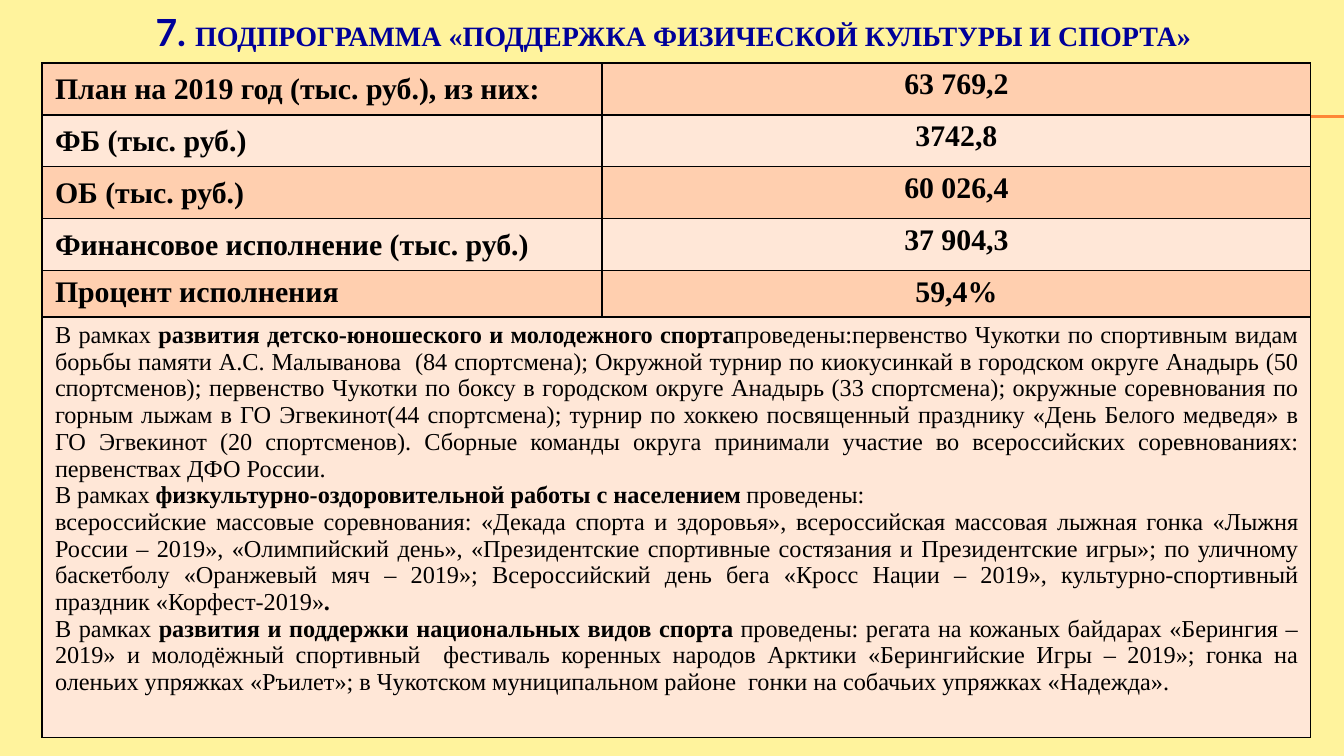
from lxml import etree
from pptx import Presentation
from pptx.dml.color import RGBColor
from pptx.enum.shapes import MSO_CONNECTOR
from pptx.enum.text import MSO_ANCHOR, PP_ALIGN
from pptx.oxml.ns import qn
from pptx.util import Cm, Pt

CENTER, JUSTIFY, LEFT = PP_ALIGN.CENTER, PP_ALIGN.JUSTIFY, PP_ALIGN.LEFT
MIDDLE = MSO_ANCHOR.MIDDLE
STRAIGHT = MSO_CONNECTOR.STRAIGHT
SERIF = "Times New Roman"
NAVY, BLACK, ORANGE = "000099", "000000", "FE8637"
CREAM, PEACH, PALE = "FFF39D", "FFCFAF", "FFE7D7"

TITLE = "ПОДПРОГРАММА «ПОДДЕРЖКА ФИЗИЧЕСКОЙ КУЛЬТУРЫ И СПОРТА»"
BUDGET = [
    ("План на 2019 год (тыс. руб.), из них:", "63 769,2"),
    ("ФБ (тыс. руб.)", "3742,8"),
    ("ОБ (тыс. руб.)", "60 026,4"),
    ("Финансовое исполнение (тыс. руб.)", "37 904,3"),
    ("Процент исполнения", "59,4%"),
]
REPORT = [
    ("В рамках ", "развития детско-юношеского и молодежного спорта",
     "проведены:первенство Чукотки по спортивным видам борьбы памяти "
     "А.С. Малыванова  (84 спортсмена); Окружной турнир по киокусинкай в "
     "городском округе Анадырь (50 спортсменов); первенство Чукотки по боксу "
     "в городском округе Анадырь (33 спортсмена); окружные соревнования по "
     "горным лыжам в ГО Эгвекинот(44 спортсмена); турнир по хоккею "
     "посвященный празднику «День Белого медведя» в ГО Эгвекинот "
     "(20 спортсменов). Сборные команды округа принимали участие во "
     "всероссийских соревнованиях: первенствах ДФО России."),
    ("В рамках ", "физкультурно-оздоровительной работы с населением",
     " проведены:"),
    ("всероссийские массовые соревнования: «Декада спорта и здоровья», "
     "всероссийская массовая лыжная гонка «Лыжня России – 2019», "
     "«Олимпийский день», «Президентские спортивные состязания и "
     "Президентские игры»; по уличному баскетболу «Оранжевый мяч – 2019»; "
     "Всероссийский день бега «Кросс Нации – 2019», культурно-спортивный "
     "праздник «Корфест-2019»", "."),
    ("В рамках ", "развития и поддержки национальных видов спорта ",
     "проведены: регата на кожаных байдарах «Берингия – 2019» и молодёжный "
     "спортивный  фестиваль коренных народов Арктики «Берингийские Игры – "
     "2019»; гонка на оленьих упряжках «Ръилет»; в Чукотском муниципальном "
     "районе  гонки на собачьих упряжках «Надежда»."),
]


def color(code):
    """Turn a hex string into a colour."""
    return RGBColor.from_string(code)


def style(font, size, code, name=SERIF):
    """Set the face, size and colour of a font."""
    font.name, font.size = name, Pt(size)
    font.color.rgb = color(code)


def add_rule(slide, top):
    """Draw a thin orange line out to the right edge."""
    line = slide.shapes.add_connector(STRAIGHT, Cm(1.42), Cm(top), Cm(25.4), Cm(top))
    line.line.color.rgb = color(ORANGE)
    line.line.width = Pt(0.75)
    props = line._element.spPr
    etree.SubElement(props, qn("a:effectLst"))


def add_title(slide):
    """Add the numbered heading."""
    box = slide.shapes.add_textbox(Cm(2.69), Cm(0.2), Cm(22.28), Cm(0.79))
    frame = box.text_frame
    frame.word_wrap = True
    frame.vertical_anchor = MIDDLE
    para = frame.paragraphs[0]
    para.alignment = JUSTIFY
    para.font.bold = True
    for text, size, name in (("7. ", 20, "Lato"), (TITLE, 15, SERIF)):
        run = para.add_run()
        run.text = text
        style(run.font, size, NAVY, name)


def paint(cell, code):
    """Give a cell black borders and a fill."""
    props = cell._tc.get_or_add_tcPr()
    for side in ("lnL", "lnR", "lnT", "lnB"):
        edge = etree.SubElement(props, qn(f"a:{side}"), w=str(Pt(1)))
        fill = etree.SubElement(edge, qn("a:solidFill"))
        etree.SubElement(fill, qn("a:srgbClr"), val=BLACK)
    cell.fill.solid()
    cell.fill.fore_color.rgb = color(code)
    cell.margin_left = cell.margin_right = Cm(0.25)
    cell.margin_top = cell.margin_bottom = Cm(0.1)


def write(cell, text, align):
    """Write one bold line in a cell."""
    para = cell.text_frame.paragraphs[0]
    para.text, para.alignment = text, align
    para.font.bold = True
    style(para.font, 16, BLACK)
    return para


def write_report(cell):
    """Write justified paragraphs whose parts alternate plain and bold."""
    frame = cell.text_frame
    for i, parts in enumerate(REPORT):
        para = frame.add_paragraph() if i else frame.paragraphs[0]
        para.alignment = JUSTIFY
        style(para.font, 13, BLACK)
        for j, text in enumerate(parts):
            run = para.add_run()
            run.text = text
            run.font.bold = j % 2 == 1


def add_budget(slide):
    """Add the budget table with the report in its merged last row."""
    last = len(BUDGET)
    shape = slide.shapes.add_table(last + 1, 2, Cm(0.79), Cm(1.19), Cm(23.98), Cm(12.7))
    table = shape.table
    table.first_row = table.horz_banding = False
    for col, width in zip(table.columns, (10.59, 13.39)):
        col.width = Cm(width)
    for row, height in zip(table.rows, [0.96] * (last - 1) + [0.86, 7.95]):
        row.height = Cm(height)
    for i, row in enumerate(table.rows):
        for cell in row.cells:
            paint(cell, PALE if i % 2 else PEACH)
    for i, (label, value) in enumerate(BUDGET):
        para = write(table.cell(i, 0), label, LEFT)
        if i < last - 1:
            para.line_spacing = 1.15
        write(table.cell(i, 1), value, CENTER)
    table.cell(last, 0).merge(table.cell(last, 1))
    write_report(table.cell(last, 0))


def main():
    """Build the slide and save it."""
    deck = Presentation()
    deck.slide_width, deck.slide_height = Cm(25.4), Cm(14.28)
    slide = deck.slides.add_slide(deck.slide_layouts[6])
    back = slide.background.fill
    back.solid()
    back.fore_color.rgb = color(CREAM)
    for top in (2.18, 2.21):
        add_rule(slide, top)
    add_title(slide)
    add_budget(slide)
    deck.save("out.pptx")


if __name__ == "__main__":
    main()
